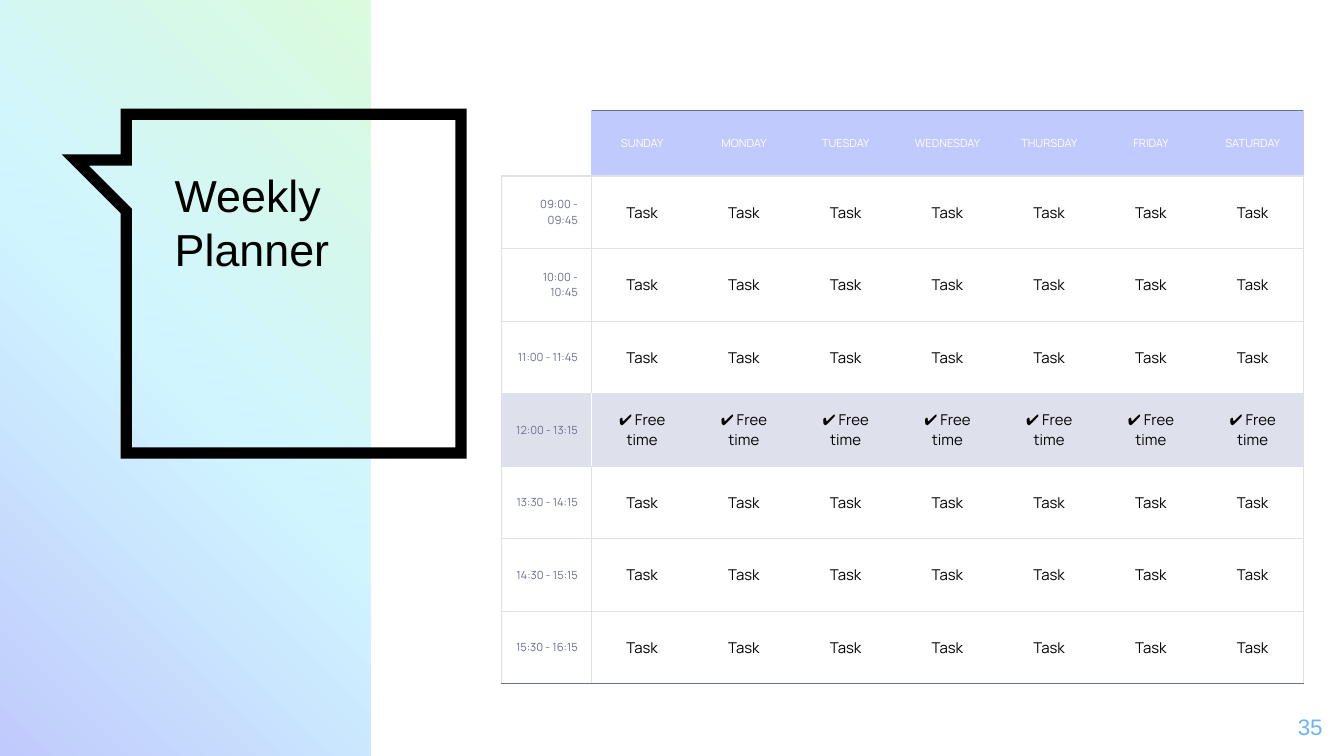
from copy import deepcopy

from lxml import etree
from pptx import Presentation
from pptx.dml.color import RGBColor
from pptx.enum.shapes import MSO_SHAPE
from pptx.enum.text import MSO_ANCHOR, MSO_AUTO_SIZE, PP_ALIGN
from pptx.oxml.ns import qn
from pptx.util import Inches, Pt

RECT = MSO_SHAPE.RECTANGLE
TOP, MIDDLE = MSO_ANCHOR.TOP, MSO_ANCHOR.MIDDLE
LEFT, CENTER, RIGHT = PP_ALIGN.LEFT, PP_ALIGN.CENTER, PP_ALIGN.RIGHT
NO_AUTOFIT = MSO_AUTO_SIZE.NONE

BLACK = RGBColor(0x00, 0x00, 0x00)
WHITE = RGBColor(0xFF, 0xFF, 0xFF)
LAVENDER = RGBColor(0xC0, 0xCA, 0xFC)
CYAN = RGBColor(0xD0, 0xF5, 0xFF)
MINT = RGBColor(0xDA, 0xFB, 0xDD)
BLUE = RGBColor(0x6D, 0xB4, 0xF5)
SLATE = RGBColor(0x6A, 0x70, 0x8D)
MIST = RGBColor(0xDE, 0xE1, 0xEC)

NO_GRID_STYLE = "{2D5ABB26-0587-4C30-8999-92F81FD0307C}"
INSET = Inches(0.1)
TABLE_WIDTH, TIME_WIDTH = Inches(5.97), Inches(0.67)

DAYS = ["SUNDAY", "MONDAY", "TUESDAY", "WEDNESDAY", "THURSDAY", "FRIDAY", "SATURDAY"]
SLOTS = [
    ("09:00 - 09:45", "Task"),
    ("10:00 - 10:45", "Task"),
    ("11:00 - 11:45", "Task"),
    ("12:00 - 13:15", "✔ Free time"),
    ("13:30 - 14:15", "Task"),
    ("14:30 - 15:15", "Task"),
    ("15:30 - 16:15", "Task"),
]
FREE_ROW = 4
CALLOUT = [(0.94, 0.85), (3.43, 0.85), (3.43, 3.37), (0.94, 3.37),
           (0.94, 1.57), (0.56, 1.19), (0.94, 1.19)]


def style_paragraph(p, size, color, font, align):
    p.alignment = align
    p.font.size = Pt(size)
    p.font.name = font
    p.font.color.rgb = color


def set_text(sp, text, size, color, align, anchor):
    tf = sp.text_frame
    tf.text = text
    tf.word_wrap = True
    tf.auto_size = NO_AUTOFIT
    tf.vertical_anchor = anchor
    tf.margin_left = tf.margin_right = tf.margin_top = tf.margin_bottom = INSET
    style_paragraph(tf.paragraphs[0], size, color, "Arial", align)


def add_gradient_panel(s, height):
    sp = s.shapes.add_shape(RECT, 0, 0, Inches(2.76), height)
    sp.shadow.inherit = False
    sp.line.fill.background()
    sp.fill.gradient()
    sp.fill.gradient_angle = 45
    stop_list = sp._element.spPr.find(qn("a:gradFill")).find(qn("a:gsLst"))
    stop_list.insert(1, deepcopy(stop_list[0]))
    for stop, color, position in zip(sp.fill.gradient_stops, (LAVENDER, CYAN, MINT), (0, 0.5, 1)):
        stop.color.rgb = color
        stop.position = position


def add_callout(s):
    points = [(Inches(x), Inches(y)) for x, y in CALLOUT]
    builder = s.shapes.build_freeform(*points[0])
    builder.add_line_segments(points[1:], close=True)
    sp = builder.convert_to_shape()
    sp.shadow.inherit = False
    sp.fill.background()
    sp.line.color.rgb = BLACK
    sp.line.width = Pt(6)
    etree.SubElement(sp.line._ln, qn("a:miter"), lim="800000")


def place_title(s):
    """Fill the title placeholder and bring it in front of the callout."""
    sp = s.shapes.title
    sp.left, sp.top, sp.width, sp.height = map(Inches, (1.2, 1.15, 2.01, 2.09))
    set_text(sp, "Weekly Planner", 24, BLACK, LEFT, TOP)
    s.shapes._spTree.append(sp._element)


def add_page_number(s):
    sp = s.shapes.add_textbox(Inches(9.34), Inches(5.19), Inches(0.6), Inches(0.43))
    set_text(sp, "35", 12, BLUE, RIGHT, MIDDLE)


def set_borders(cell, borders):
    """Draw borders given as {side: color}; sides L, R, T or B left out get no line."""
    tc_pr = cell._tc.get_or_add_tcPr()
    for side in "LRTB":
        ln = etree.SubElement(tc_pr, qn(f"a:ln{side}"), w=str(Pt(0.75)))
        if side in borders:
            fill = etree.SubElement(ln, qn("a:solidFill"))
            etree.SubElement(fill, qn("a:srgbClr"), val=str(borders[side]))
        else:
            etree.SubElement(ln, qn("a:noFill"))


def cell_borders(row, col):
    last_col, last_row = len(DAYS), len(SLOTS)
    borders = {"B": SLATE if row == last_row else MIST}
    if row > 0:
        borders["T"] = MIST
    elif col > 0:
        borders["T"] = SLATE
    side_color = LAVENDER if row == 0 else MIST
    divider = WHITE if row == FREE_ROW else side_color
    if col == 0:
        borders["R"] = divider
        if row > 0:
            borders["L"] = MIST
    elif col == 1:
        borders["L"] = divider
    elif col == last_col:
        borders["R"] = side_color
    return borders


def format_cell(cell, row, col):
    cell.margin_left = cell.margin_right = cell.margin_top = cell.margin_bottom = INSET
    cell.vertical_anchor = MIDDLE
    set_borders(cell, cell_borders(row, col))
    if row == 0 and col > 0:
        cell.fill.solid()
        cell.fill.fore_color.rgb = LAVENDER
    elif row == FREE_ROW:
        cell.fill.solid()
        cell.fill.fore_color.rgb = MIST
    else:
        cell.fill.background()
    if row == 0:
        size, color, align = 6, WHITE, CENTER
    elif col == 0:
        size, color, align = 6, SLATE, RIGHT
    else:
        size, color, align = 8, BLACK, CENTER
    style_paragraph(cell.text_frame.paragraphs[0], size, color, "Manrope", align)


def add_planner(s):
    rows = [[""] + DAYS] + [[time] + [entry] * len(DAYS) for time, entry in SLOTS]
    frame = s.shapes.add_table(len(rows), len(rows[0]), Inches(3.73), Inches(0.82),
                               TABLE_WIDTH, Inches(4.27))
    table = frame.table
    table.first_row = table.horz_banding = False
    table._tbl.tblPr.find(qn("a:tableStyleId")).text = NO_GRID_STYLE
    day_width = (TABLE_WIDTH - TIME_WIDTH) // len(DAYS)
    for i, column in enumerate(table.columns):
        column.width = TIME_WIDTH if i == 0 else day_width
    for r, texts in enumerate(rows):
        table.rows[r].height = Inches(0.49 if r == 0 else 0.54)
        for c, text in enumerate(texts):
            cell = table.cell(r, c)
            cell.text = text
            format_cell(cell, r, c)


def main():
    prs = Presentation()
    prs.slide_width = Inches(10)
    prs.slide_height = prs.slide_width * 9 // 16
    s = prs.slides.add_slide(prs.slide_layouts[5])
    add_gradient_panel(s, prs.slide_height)
    add_callout(s)
    place_title(s)
    add_page_number(s)
    add_planner(s)
    prs.save("out.pptx")


if __name__ == "__main__":
    main()
